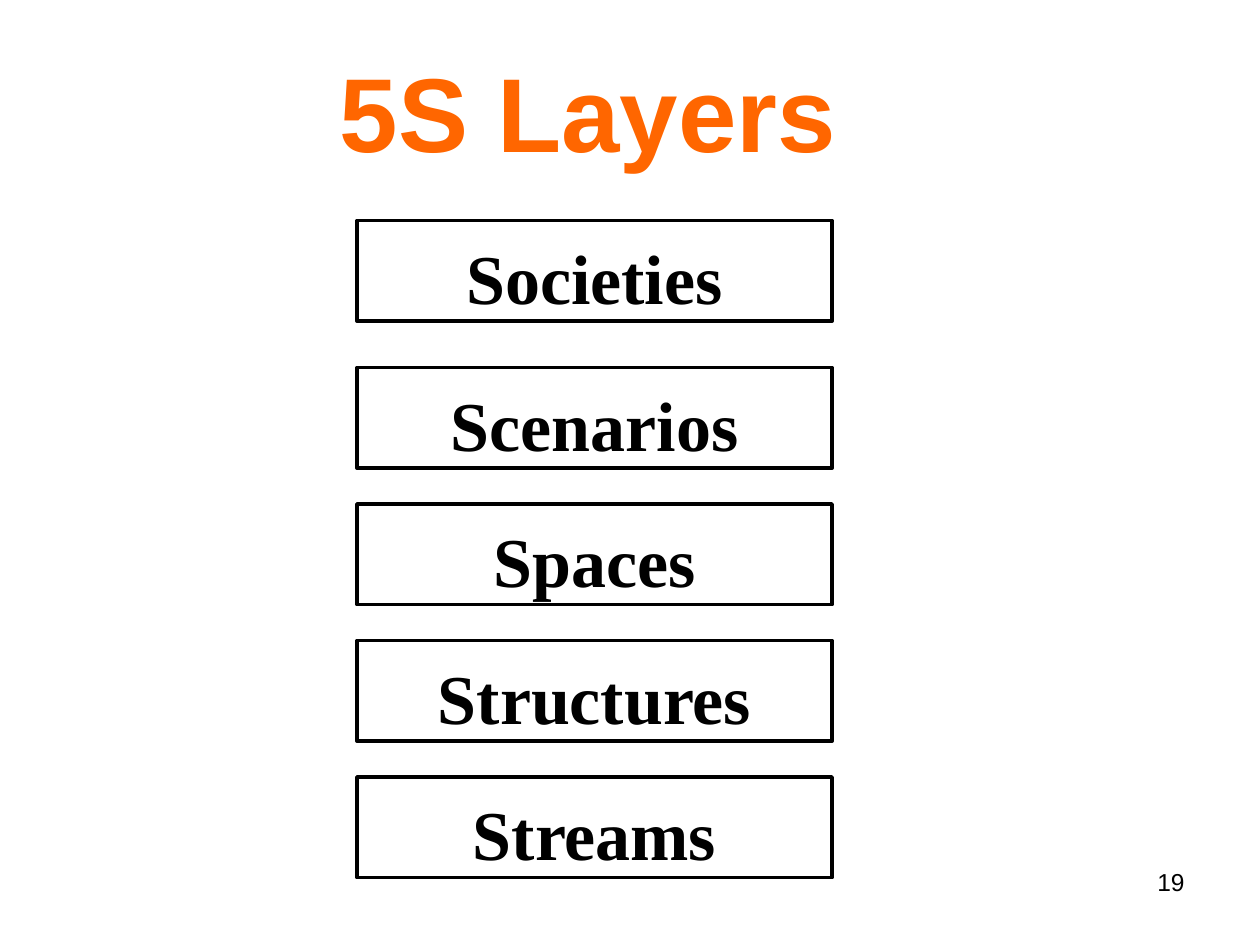
"""Build the 5S Layers slide: a title above five stacked boxes."""
from dataclasses import dataclass

from pptx import Presentation
from pptx.dml.color import RGBColor
from pptx.enum import shapes, text
from pptx.util import Pt


@dataclass
class Layer:
    name: str
    top: float


LAYERS = [Layer("Societies", 126)] + [
    Layer(name, 210 + 78 * index)
    for index, name in enumerate(["Scenarios", "Spaces", "Structures", "Streams"])
]


def color(value: str) -> RGBColor:
    return RGBColor.from_string(value)


def place(shape, left: float, top: float, width: float, height: float) -> None:
    shape.left, shape.top = Pt(left), Pt(top)
    shape.width, shape.height = Pt(width), Pt(height)


def write(shape, words: str, font_name: str, size: float, hex_color: str,
          bold: bool = True, alignment=text.PP_ALIGN.CENTER) -> None:
    shape.text_frame.word_wrap = True
    paragraph = shape.text_frame.paragraphs[0]
    paragraph.text = words
    paragraph.alignment = alignment
    font = paragraph.font
    font.name, font.size, font.bold = font_name, Pt(size), bold
    font.color.rgb = color(hex_color)


def draw_layer(slide, layer: Layer) -> None:
    shape = slide.shapes.add_shape(
        shapes.MSO_SHAPE.RECTANGLE, Pt(204), Pt(layer.top), Pt(271.5), Pt(57.6))
    shape.shadow.inherit = False
    shape.fill.background()
    shape.line.color.rgb = color("000000")
    shape.line.width = Pt(2)
    write(shape, layer.name, "Times New Roman", 40, "000000")
    frame = shape.text_frame
    frame.auto_size = text.MSO_AUTO_SIZE.SHAPE_TO_FIT_TEXT
    frame.vertical_anchor = text.MSO_ANCHOR.TOP
    frame.margin_top = Pt(8)
    frame.margin_bottom = Pt(3.6)


def main() -> None:
    presentation = Presentation()
    presentation.slide_width, presentation.slide_height = Pt(720), Pt(540)
    slide = presentation.slides.add_slide(presentation.slide_layouts[5])

    title = slide.shapes.title
    place(title, 12, 18, 648, 90)
    write(title, "5S Layers", "Arial", 60, "FF6600")
    title.text_frame.vertical_anchor = text.MSO_ANCHOR.MIDDLE
    title.text_frame.auto_size = text.MSO_AUTO_SIZE.NONE

    for layer in LAYERS:
        draw_layer(slide, layer)

    number = slide.shapes.add_textbox(Pt(516), Pt(492), Pt(168), Pt(37.5))
    write(number, "19", "Arial", 14, "000000", False, text.PP_ALIGN.RIGHT)

    presentation.save("out.pptx")


if __name__ == "__main__":
    main()
